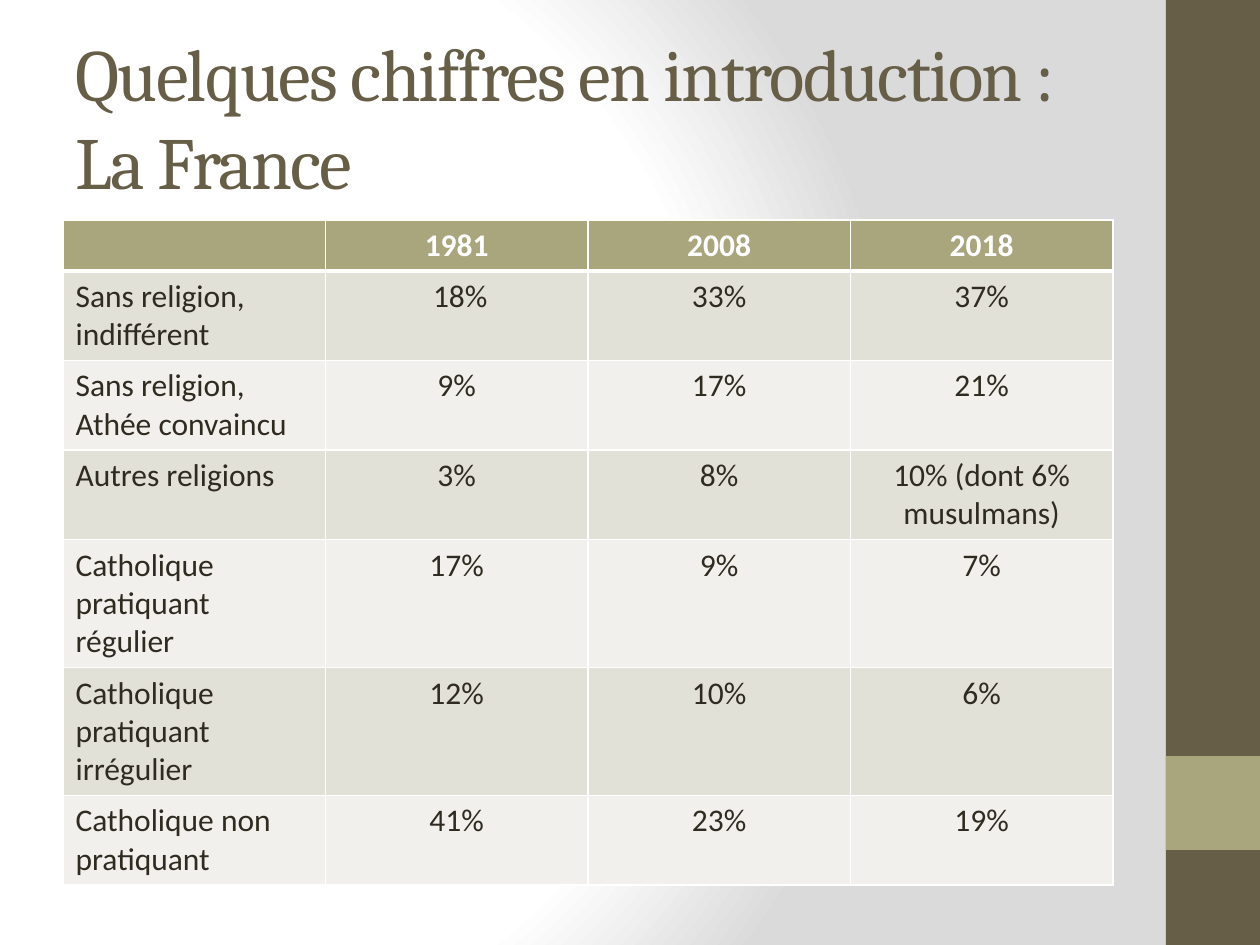
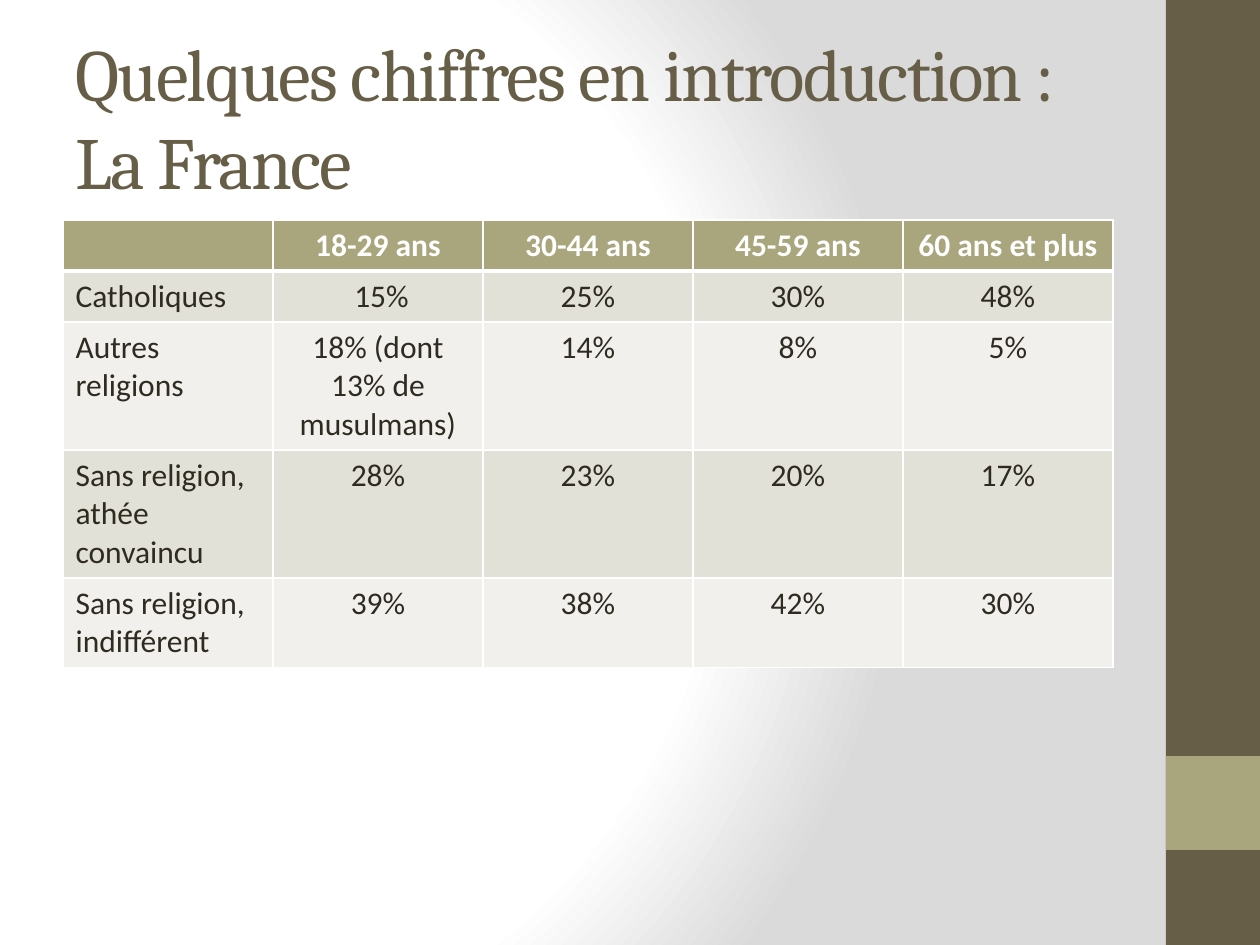
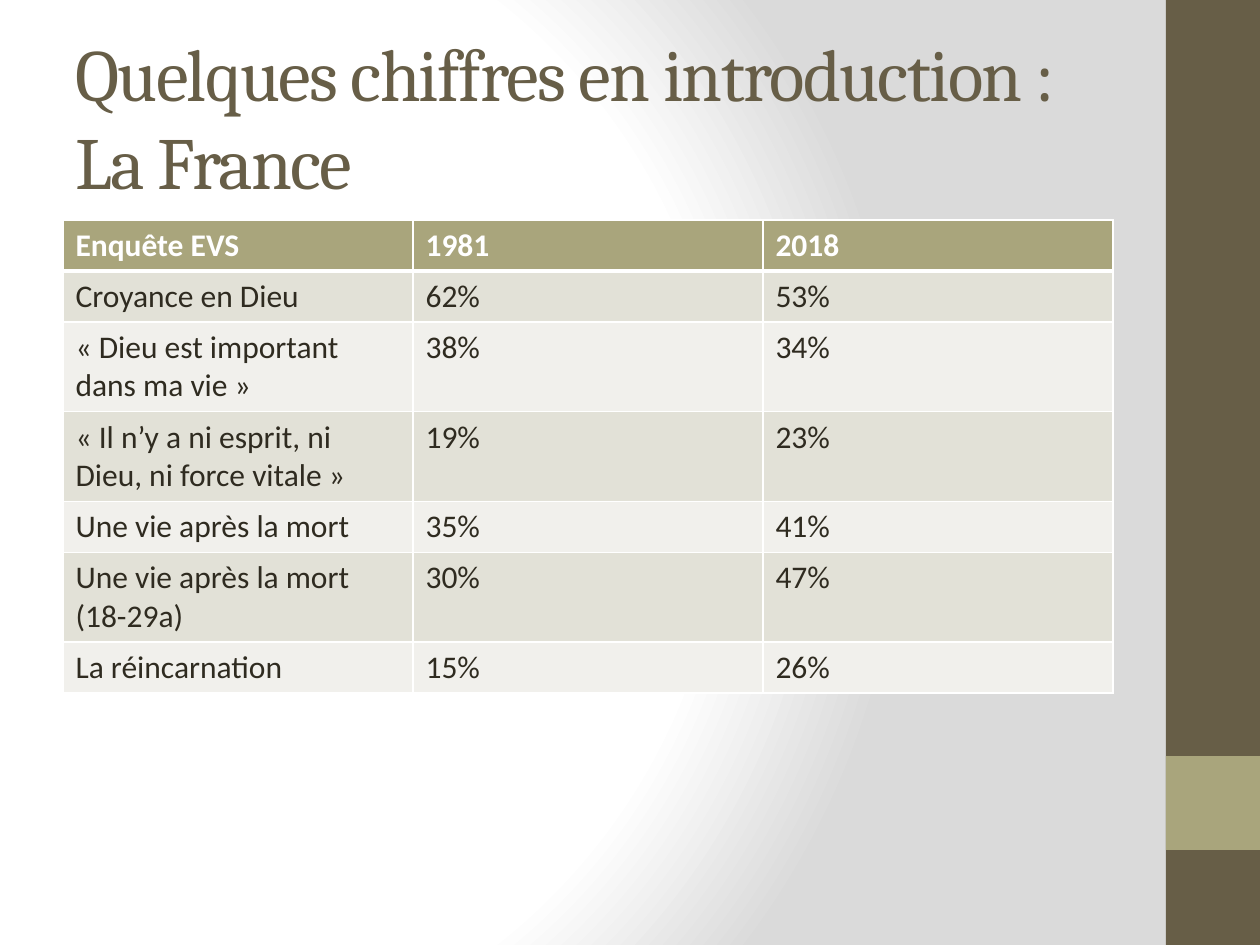
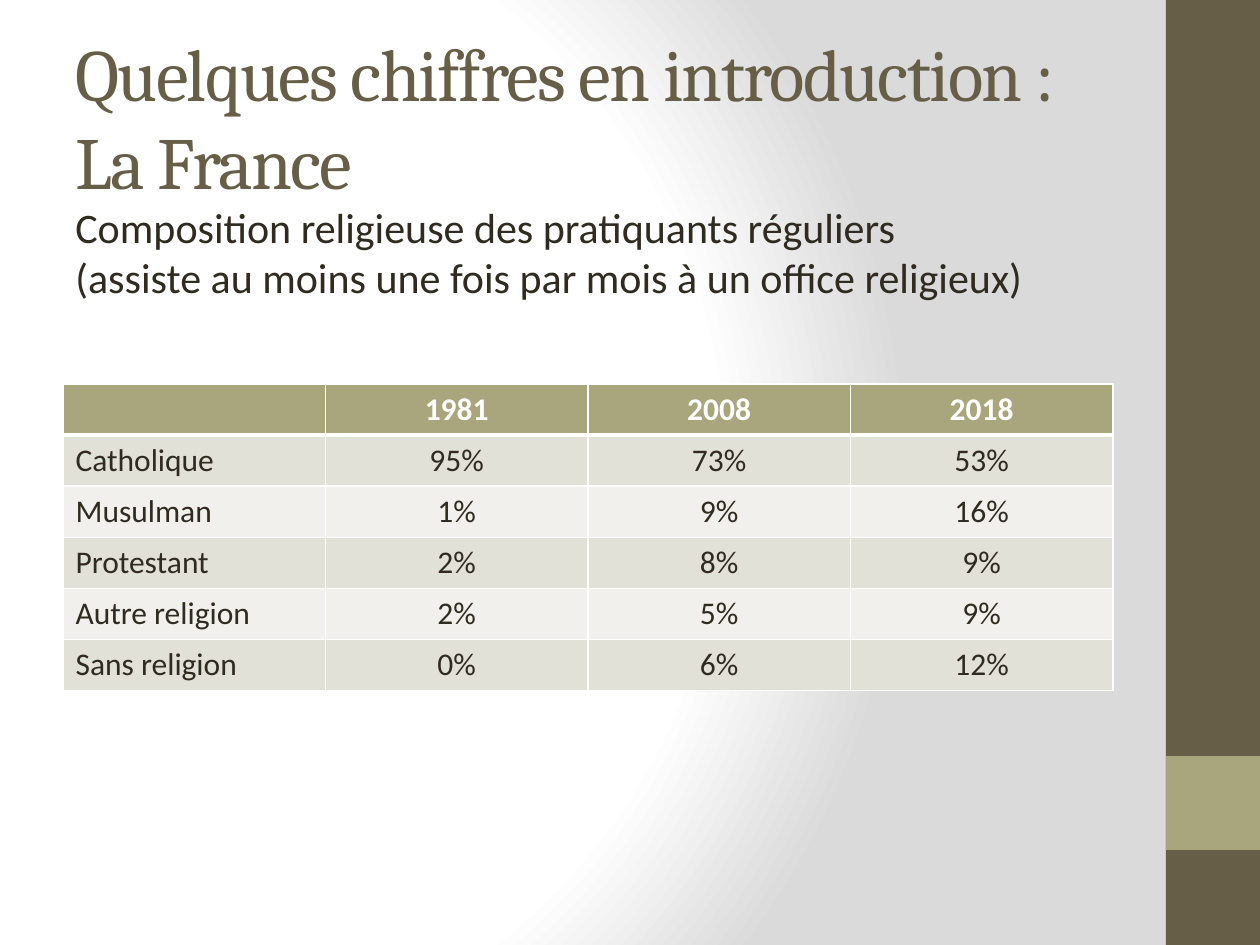
"""Build four slides of survey tables on religion in France."""
import pptx
import pptx.dml.color
import pptx.enum.shapes
import pptx.enum.text
import pptx.oxml
import pptx.oxml.ns
import pptx.util
from lxml import etree

TITLE = "Quelques chiffres en introduction : La France"
SUBTITLE = [
    "Composition religieuse des pratiquants réguliers",
    "(assiste au moins une fois par mois à un office religieux)",
]
SLIDES = [
    {
        "top": 220, "centred": True, "subtitle": [],
        "rows": [
            ("", "1981", "2008", "2018"),
            ("Sans religion, indifférent", " 18%", "33%", "37%"),
            ("Sans religion, Athée convaincu", "9%", "17%", "21%"),
            ("Autres religions", "3%", "8%", "10% (dont 6% musulmans)"),
            ("Catholique pratiquant régulier", "17%", "9%", "7%"),
            ("Catholique pratiquant irrégulier", "12%", "10%", "6%"),
            ("Catholique non pratiquant", "41%", "23%", "19%"),
        ],
    },
    {
        "top": 220, "centred": True, "subtitle": [],
        "rows": [
            ("", "18-29 ans", "30-44 ans", "45-59 ans", "60 ans et plus"),
            ("Catholiques", " 15%", "25%", "30%", "48%"),
            ("Autres religions", "18% (dont 13% de musulmans)", "14%", "8%", "5%"),
            ("Sans religion, athée convaincu", "28%", "23%", "20%", "17%"),
            ("Sans religion, indifférent", "39%", "38%", "42%", "30%"),
        ],
    },
    {
        "top": 220, "centred": False, "subtitle": [],
        "rows": [
            ("Enquête EVS", "1981", "2018"),
            ("Croyance en Dieu", "62%", "53%"),
            ("« Dieu est important dans ma vie »", "38%", "34%"),
            ("« Il n’y a ni esprit, ni Dieu, ni force vitale »", "19%", "23%"),
            ("Une vie après la mort", "35%", "41%"),
            ("Une vie après la mort (18-29a)", "30%", "47%"),
            ("La réincarnation", "15%", "26%"),
        ],
    },
    {
        "top": 384, "centred": True, "subtitle": SUBTITLE,
        "rows": [
            ("", "1981", "2008", "2018"),
            ("Catholique", "95%", "73%", "53%"),
            ("Musulman", "1%", "9%", "16%"),
            ("Protestant", "2%", "8%", "9%"),
            ("Autre religion", "2%", "5%", "9%"),
            ("Sans religion", "0%", "6%", "12%"),
        ],
    },
]

PX = 914400 / 126
WIDTH, HEIGHT = 1260, 945
LEFT, TABLE_WIDTH, ROW_HEIGHT = 63, 1050, 51
BROWN, OLIVE, INK, WHITE = "675E47", "A9A57C", "2F2B20", "FFFFFF"
STRIPES = ["E2E1D7", "F1F0EC"]
HEADING_FONT, BODY_FONT = "Cambria", "Calibri"
BANDS = [((1166, 0, 94, 945), BROWN), ((1166, 756, 94, 94), OLIVE)]
GRADIENT = [(0, WHITE), (75, WHITE), (100, "DADADA")]
ALIGN = pptx.enum.text.PP_ALIGN


def px(length):
    return pptx.util.Emu(round(length * PX))


def box(*lengths):
    return [px(length) for length in lengths]


def paint(color_format, color):
    color_format.rgb = pptx.dml.color.RGBColor.from_string(color)


def fill_solid(fill, color):
    fill.solid()
    paint(fill.fore_color, color)


def write(paragraph, text, font, size, color, bold=False, align=ALIGN.LEFT):
    paragraph.alignment = align
    run = paragraph.add_run()
    run.text = text
    run.font.name = font
    run.font.size = pptx.util.Pt(size)
    run.font.bold = bold
    paint(run.font.color, color)
    return run


def set_background(layout):
    stops = "".join(
        f'<a:gs pos="{position * 1000}"><a:srgbClr val="{color}"/></a:gs>'
        for position, color in GRADIENT
    )
    background = pptx.oxml.parse_xml(
        f'<p:bg {pptx.oxml.ns.nsdecls("p", "a")}><p:bgPr><a:gradFill rotWithShape="1">'
        f'<a:gsLst>{stops}</a:gsLst><a:path path="circle">'
        '<a:fillToRect l="20000" t="50000" r="100000" b="50000"/></a:path>'
        "</a:gradFill><a:effectLst/></p:bgPr></p:bg>"
    )
    layout.element.cSld.insert(0, background)


def add_bands(slide, layout):
    for position, (place, color) in enumerate(BANDS, start=2):
        band = slide.shapes.add_shape(pptx.enum.shapes.MSO_SHAPE.RECTANGLE, *box(*place))
        band.shadow.inherit = False
        fill_solid(band.fill, color)
        band.line.fill.background()
        layout.shapes.element.insert(position, band.element)


def add_title(slide):
    title = slide.shapes.title
    title.left, title.top, title.width, title.height = box(LEFT, 38, TABLE_WIDTH, 157)
    frame = title.text_frame
    frame.word_wrap = True
    frame.auto_size = pptx.enum.text.MSO_AUTO_SIZE.NONE
    frame.vertical_anchor = pptx.enum.text.MSO_ANCHOR.MIDDLE
    run = write(frame.paragraphs[0], TITLE, HEADING_FONT, 42, BROWN)
    run.font._element.set("spc", "-100")


def set_borders(cell, top, bottom):
    properties = cell._tc.get_or_add_tcPr()
    for side, points in (("L", 1), ("R", 1), ("T", top), ("B", bottom)):
        line = etree.SubElement(properties, pptx.oxml.ns.qn(f"a:ln{side}"))
        line.set("w", str(pptx.util.Pt(points)))
        solid = etree.SubElement(line, pptx.oxml.ns.qn("a:solidFill"))
        etree.SubElement(solid, pptx.oxml.ns.qn("a:srgbClr")).set("val", WHITE)


def add_table(slide, rows, top, centred):
    place = box(LEFT, top, TABLE_WIDTH, ROW_HEIGHT * len(rows))
    table = slide.shapes.add_table(len(rows), len(rows[0]), *place).table
    for column in table.columns:
        column.width = px(TABLE_WIDTH / len(rows[0]))
    for row_index, values in enumerate(rows):
        table.rows[row_index].height = px(ROW_HEIGHT)
        header = row_index == 0
        for column_index, value in enumerate(values):
            cell = table.cell(row_index, column_index)
            set_borders(cell, 3 if row_index == 1 else 1, 3 if header else 1)
            fill_solid(cell.fill, OLIVE if header else STRIPES[(row_index - 1) % 2])
            if value:
                align = ALIGN.CENTER if centred and column_index else ALIGN.LEFT
                write(cell.text_frame.paragraphs[0], value, BODY_FONT, 18,
                      WHITE if header else INK, header, align)


def add_subtitle(slide, lines):
    frame = slide.shapes.add_textbox(*box(LEFT, 195, 985, 152)).text_frame
    frame.word_wrap = True
    for index, line in enumerate(lines):
        paragraph = frame.add_paragraph() if index else frame.paragraphs[0]
        write(paragraph, line, BODY_FONT, 24, INK)


def main():
    presentation = pptx.Presentation()
    presentation.slide_width, presentation.slide_height = box(WIDTH, HEIGHT)
    layout = presentation.slide_layouts.get_by_name("Title Only")
    set_background(layout)
    for index, content in enumerate(SLIDES):
        slide = presentation.slides.add_slide(layout)
        if index == 0:
            add_bands(slide, layout)
        add_title(slide)
        add_table(slide, content["rows"], content["top"], content["centred"])
        if content["subtitle"]:
            add_subtitle(slide, content["subtitle"])
    presentation.save("out.pptx")


if __name__ == "__main__":
    main()
